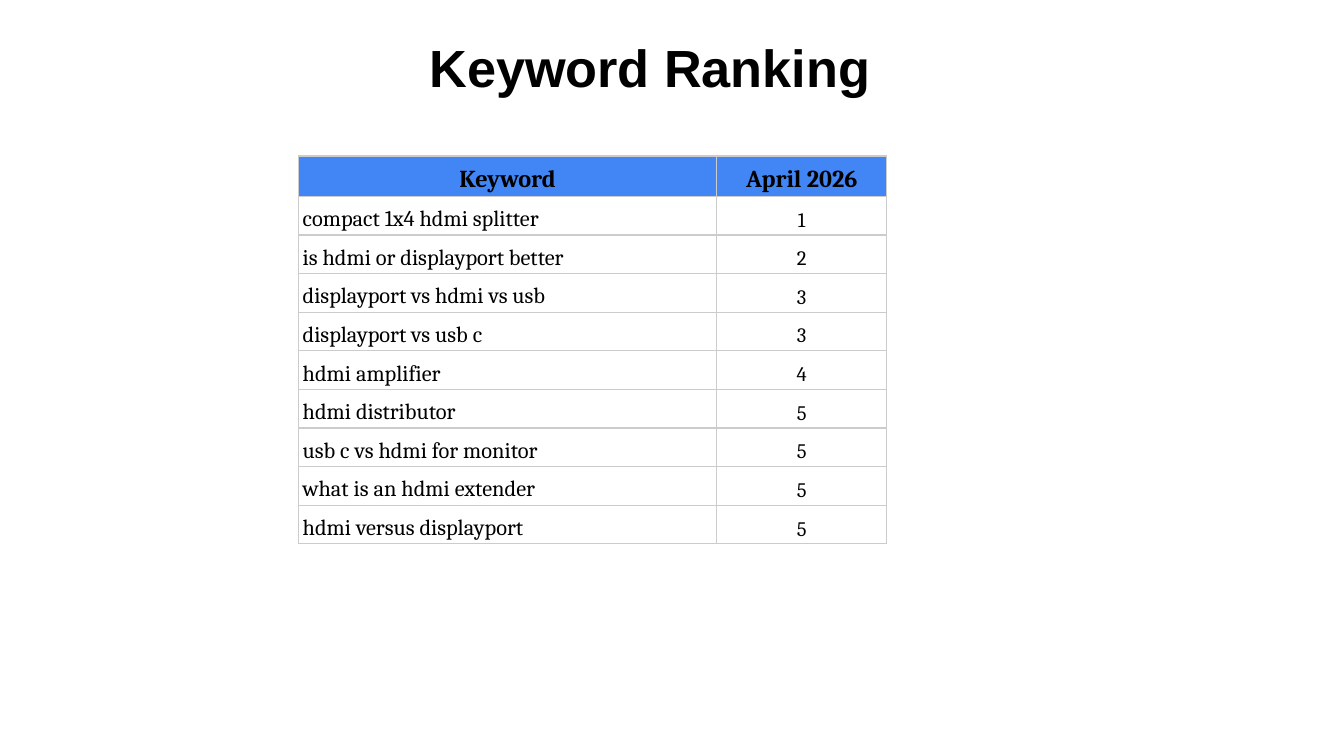
import pptx
import pptx.dml.color
import pptx.enum.text
import pptx.oxml.ns
import pptx.util
from lxml import etree

Cm = pptx.util.Cm
Pt = pptx.util.Pt
ALIGN = pptx.enum.text.PP_ALIGN
ANCHOR = pptx.enum.text.MSO_ANCHOR

COLORS = {"text": "000000", "header": "4285F4", "border": "CCCCCC"}
HEADINGS = ("Keyword", "April 2026")
RANKINGS = [
    ("compact 1x4 hdmi splitter", 1),
    ("is hdmi or displayport better", 2),
    ("displayport vs hdmi vs usb", 3),
    ("displayport vs usb c", 3),
    ("hdmi amplifier", 4),
    ("hdmi distributor", 5),
    ("usb c vs hdmi for monitor", 5),
    ("what is an hdmi extender", 5),
    ("hdmi versus displayport", 5),
]


def rgb(name):
    return pptx.dml.color.RGBColor.from_string(COLORS[name])


def add_text(paragraph, text, size, font, bold, align):
    paragraph.alignment = align
    run = paragraph.add_run()
    run.text = text
    run.font.size = Pt(size)
    run.font.name = font
    run.font.bold = bold
    run.font.color.rgb = rgb("text")


def set_margins(target, horizontal, vertical):
    target.margin_left = target.margin_right = horizontal
    target.margin_top = target.margin_bottom = vertical


def add_title(slide, text):
    title = slide.shapes.title
    title.left, title.top = Cm(1.04), Cm(0.41)
    title.width, title.height = Cm(22.48), Cm(1.7)
    frame = title.text_frame
    frame.word_wrap = True
    frame.auto_size = pptx.enum.text.MSO_AUTO_SIZE.NONE
    frame.vertical_anchor = ANCHOR.TOP
    set_margins(frame, Cm(0.25), Cm(0.25))
    add_text(frame.paragraphs[0], text, 28, "Arial", True, ALIGN.CENTER)


def add_borders(cell):
    qn = pptx.oxml.ns.qn
    properties = cell._tc.get_or_add_tcPr()
    for side in ("a:lnL", "a:lnR", "a:lnT", "a:lnB"):
        border = etree.SubElement(properties, qn(side), w=str(Pt(0.75)))
        fill = etree.SubElement(border, qn("a:solidFill"))
        etree.SubElement(fill, qn("a:srgbClr"), val=COLORS["border"])


def fill_cell(cell, text, size, bold, align, background=None):
    add_borders(cell)
    if background:
        cell.fill.solid()
        cell.fill.fore_color.rgb = rgb(background)
    else:
        cell.fill.background()
    set_margins(cell, Cm(0.08), Cm(0.05))
    cell.vertical_anchor = ANCHOR.BOTTOM
    paragraph = cell.text_frame.paragraphs[0]
    paragraph.line_spacing = 1.15
    add_text(paragraph, text, size, "Cambria", bold, align)


def add_ranking_table(slide):
    widths = (Cm(7.9), Cm(3.22))
    header_height, row_height = Cm(0.76), Cm(0.73)
    table = slide.shapes.add_table(
        len(RANKINGS) + 1, len(HEADINGS), Cm(5.64), Cm(2.95),
        sum(widths), header_height + row_height * len(RANKINGS),
    ).table
    for column, width in zip(table.columns, widths):
        column.width = width
    for row in table.rows:
        row.height = row_height
    table.rows[0].height = header_height
    for column, heading in enumerate(HEADINGS):
        fill_cell(table.cell(0, column), heading, 13, True, ALIGN.CENTER, "header")
    for row, (keyword, rank) in enumerate(RANKINGS, start=1):
        fill_cell(table.cell(row, 0), keyword, 12, False, ALIGN.LEFT)
        fill_cell(table.cell(row, 1), str(rank), 11, False, ALIGN.CENTER)


def main():
    presentation = pptx.Presentation()
    presentation.slide_width = Cm(25.4)
    presentation.slide_height = Cm(14.29)
    slide = presentation.slides.add_slide(presentation.slide_layouts[5])
    add_title(slide, "Keyword Ranking")
    add_ranking_table(slide)
    presentation.save("out.pptx")


if __name__ == "__main__":
    main()
